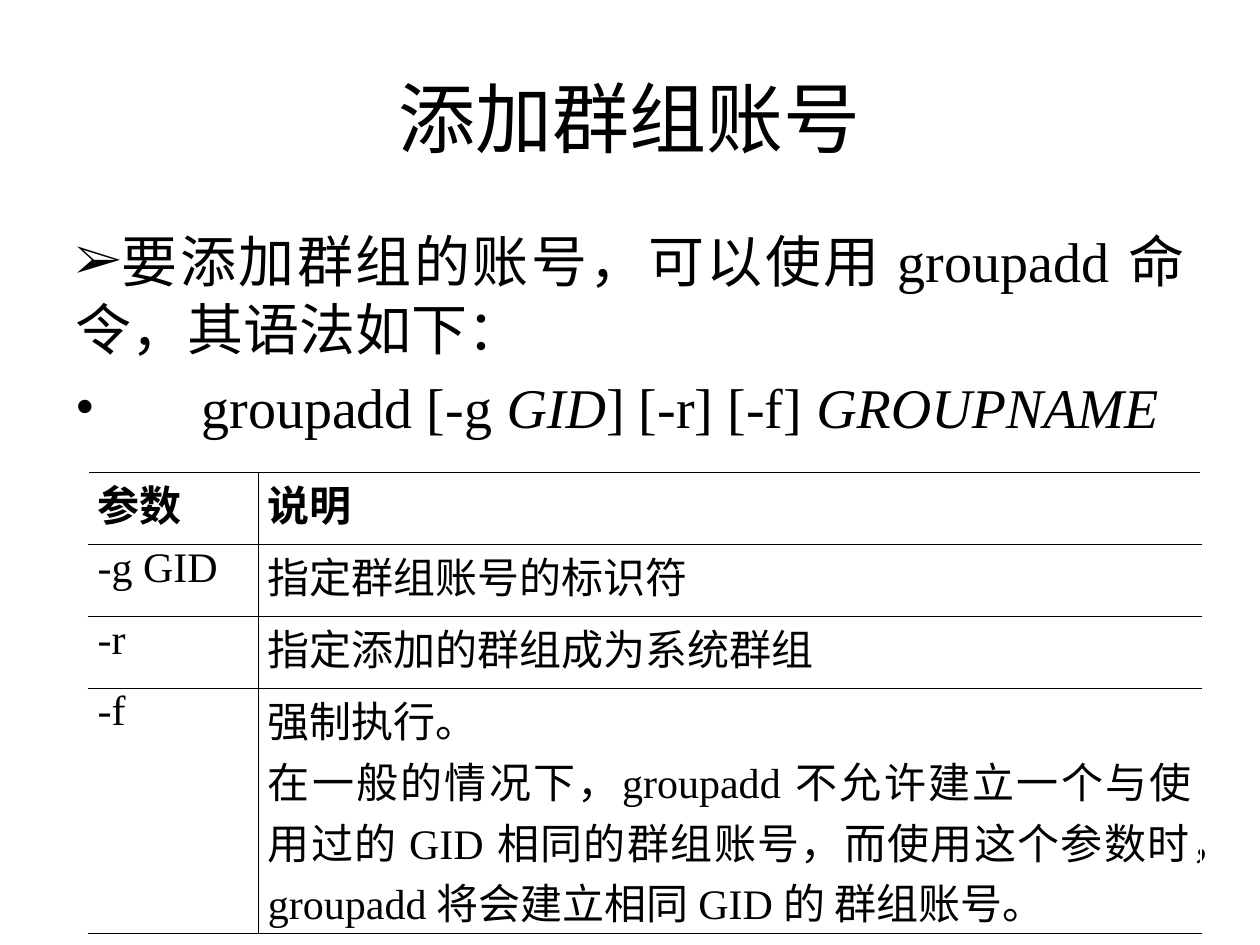
"""Build the slide on adding group accounts."""
from lxml import etree
from pptx import Presentation
from pptx import util as u
from pptx.dml.color import RGBColor
from pptx.enum import text
from pptx.oxml import ns

BLACK = RGBColor(0x00, 0x00, 0x00)
WHITE = RGBColor(0xFF, 0xFF, 0xFF)
JUSTIFY = text.PP_ALIGN.JUSTIFY
OPTIONS = [
    ("参数", ["说明"]),
    ("-g GID", ["指定群组账号的标识符"]),
    ("-r", ["指定添加的群组成为系统群组"]),
    ("-f", ["强制执行。",
            "在一般的情况下，groupadd 不允许建立一个与使用过的 GID 相同的群组账号，"
            "而使用这个参数时，groupadd 将会建立相同 GID 的 群组账号。"]),
]
SYNTAX = [("\tgroupadd [-g ", False), ("GID", True),
          ("] [-r] [-f] ", False), ("GROUPNAME", True)]


def assign(target, values):
    for name, value in values.items():
        setattr(target, name, value)


def add_element(parent, tag, **attributes):
    return etree.SubElement(parent, ns.qn(tag), attributes)


class SlideBuilder:
    def __init__(self, presentation):
        self.slide = presentation.slides.add_slide(presentation.slide_layouts[5])
        background = self.slide.background.fill
        background.solid()
        background.fore_color.rgb = WHITE
        self.font = {"name": "Times New Roman"}

    def run(self, paragraph, content, size, **style):
        run = paragraph.add_run()
        run.text = content
        assign(run.font, {**self.font, "size": u.Pt(size), **style})
        run.font.color.rgb = BLACK

    def title(self, content, box):
        title = self.slide.shapes.title
        assign(title, box)
        title.text_frame.vertical_anchor = text.MSO_ANCHOR.MIDDLE
        paragraph = title.text_frame.paragraphs[0]
        paragraph.alignment = text.PP_ALIGN.CENTER
        self.run(paragraph, content, 44)

    def bullets(self, items, box):
        frame = self.slide.shapes.add_textbox(**box).text_frame
        frame.word_wrap = True
        for index, (bullet, percent, runs, values) in enumerate(items):
            paragraph = frame.add_paragraph() if index else frame.paragraphs[0]
            properties = paragraph._p.get_or_add_pPr()
            properties.set("marL", "0")
            properties.set("indent", "0")
            add_element(properties, "a:buSzPct", val=str(percent * 1000))
            add_element(properties, "a:buFont", typeface=self.font["name"])
            add_element(properties, "a:buChar", char=bullet)
            tabs = add_element(properties, "a:tabLst")
            add_element(tabs, "a:tab", pos=str(u.Cm(2.54)), algn="l")
            assign(paragraph, values)
            for content, italic in runs:
                self.run(paragraph, content, 32, italic=italic)

    def cell(self, cell, lines, sides, bold):
        assign(cell, {"margin_left": u.Cm(0.19), "margin_right": u.Cm(0.19),
                      "margin_top": 0, "margin_bottom": 0})
        properties = cell._tc.get_or_add_tcPr()
        for side in sides:
            line = add_element(properties, f"a:ln{side}", w=str(u.Pt(1)))
            fill = add_element(line, "a:solidFill")
            add_element(fill, "a:srgbClr", val=str(BLACK))
        cell.fill.background()
        for index, content in enumerate(lines):
            frame = cell.text_frame
            paragraph = frame.add_paragraph() if index else frame.paragraphs[0]
            paragraph.alignment = JUSTIFY
            self.run(paragraph, content, 24, bold=bold)

    def table(self, rows, left, top, widths, heights):
        table = self.slide.shapes.add_table(
            len(heights), len(widths), left, top, sum(widths), sum(heights)).table
        assign(table, {"first_row": False, "horz_banding": False})
        for column, width in zip(table.columns, widths):
            column.width = width
        for index, (option, description) in enumerate(rows):
            table.rows[index].height = heights[index]
            self.cell(table.cell(index, 0), [option], "RTB", index == 0)
            self.cell(table.cell(index, 1), description, "LTB", index == 0)


def main():
    presentation = Presentation()
    assign(presentation, {"slide_width": u.Cm(25.4), "slide_height": u.Cm(19.05)})
    builder = SlideBuilder(presentation)
    column = {"left": u.Cm(1.27), "width": u.Cm(22.86)}
    builder.title("添加群组账号", {**column, "top": u.Cm(0.76), "height": u.Cm(3.18)})
    builder.bullets([
        ("➢", 90, [("要添加群组的账号，可以使用 groupadd 命令，其语法如下：", False)],
         {"alignment": JUSTIFY}),
        ("•", 100, SYNTAX, {"space_before": u.Pt(6.4)}),
    ], {**column, "top": u.Cm(4.45), "height": u.Cm(12.57)})
    builder.table(OPTIONS, u.Cm(1.78), u.Cm(9.53),
                  [u.Cm(3.43), u.Cm(19)], [u.Cm(1.45)] * 3 + [u.Cm(4.94)])
    presentation.save("out.pptx")


if __name__ == "__main__":
    main()
